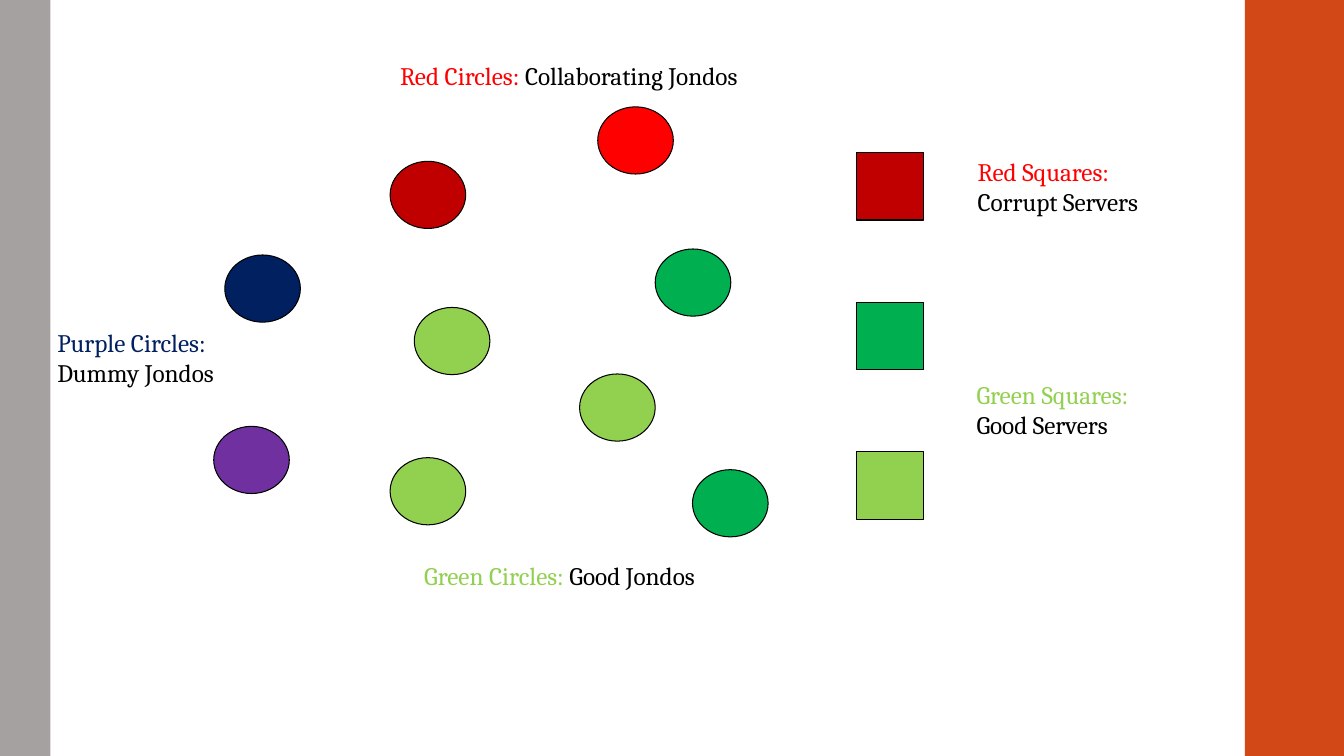
from dataclasses import dataclass

from pptx import Presentation
from pptx.dml.color import RGBColor
from pptx.enum.shapes import MSO_SHAPE
from pptx.enum.text import MSO_AUTO_SIZE
from pptx.shapes.autoshape import Shape
from pptx.slide import Slide
from pptx.util import Inches, Length, Pt

OVAL = MSO_SHAPE.OVAL
RECT = MSO_SHAPE.RECTANGLE
GROW = MSO_AUTO_SIZE.SHAPE_TO_FIT_TEXT

COLS, ROWS = 40, 22.5
CELL = Inches(1 / 3)


@dataclass(frozen=True)
class Theme:
    font: str = "Cambria"
    size: Length = Pt(18)
    line: Length = Pt(0.75)
    black: str = "000000"
    red: str = "FF0000"
    dark_red: str = "C00000"
    green: str = "00B050"
    lime: str = "92D050"
    navy: str = "002060"
    purple: str = "7030A0"
    orange: str = "D34817"
    gray: str = "A6A1A1"


@dataclass(frozen=True)
class Box:
    col: float
    row: float
    wide: float
    high: float


@dataclass(frozen=True)
class Jondo:
    col: float
    row: float
    color: str


@dataclass(frozen=True)
class Label:
    box: Box
    name: str
    color: str
    role: str
    stacked: bool = True


THEME = Theme()
JONDO_WIDE, JONDO_HIGH = 2.25, 2
SERVER_COL, SERVER_ROW, SERVER_STEP, SERVER_SIDE = 25.5, 4.55, 4.45, 2

BARS = [
    (Box(37.05, 0, 2.95, ROWS), THEME.orange),
    (Box(0, 0, 1.5, ROWS), THEME.gray),
]
JONDOS = [
    Jondo(11.61, 4.8, THEME.dark_red),
    Jondo(17.79, 3.18, THEME.red),
    Jondo(19.5, 7.41, THEME.green),
    Jondo(6.69, 7.59, THEME.navy),
    Jondo(12.33, 9.15, THEME.lime),
    Jondo(20.61, 13.98, THEME.green),
    Jondo(11.61, 13.62, THEME.lime),
    Jondo(6.36, 12.69, THEME.purple),
    Jondo(17.25, 11.13, THEME.lime),
]
SERVERS = [THEME.dark_red, THEME.green, THEME.lime]
LABELS = [
    Label(Box(12.33, 16.53, 9.03, 1.2), "Green Circles:", THEME.lime,
          "Good Jondos", stacked=False),
    Label(Box(11.61, 1.65, 10.74, 1.2), "Red Circles:", THEME.red,
          "Collaborating Jondos", stacked=False),
    Label(Box(1.41, 9.6, 5.31, 2.13), "Purple Circles:", THEME.navy, "Dummy Jondos"),
    Label(Box(28.77, 11.13, 5.31, 2.13), "Green Squares:", THEME.lime, "Good Servers"),
    Label(Box(28.8, 4.5, 5.4, 2.13), "Red Squares:", THEME.red, "Corrupt Servers"),
]


def place(box: Box) -> list[int]:
    """Turn grid cells into slide lengths."""
    return [round(n * CELL) for n in (box.col, box.row, box.wide, box.high)]


def add_block(slide: Slide, kind: MSO_SHAPE, box: Box, color: str) -> Shape:
    block = slide.shapes.add_shape(kind, *place(box))
    block.shadow.inherit = False
    block.fill.solid()
    block.fill.fore_color.rgb = RGBColor.from_string(color)
    block.line.fill.background()
    return block


def add_node(slide: Slide, kind: MSO_SHAPE, box: Box, color: str) -> None:
    """Draw a block with a thin black outline."""
    line = add_block(slide, kind, box, color).line
    line.color.rgb = RGBColor.from_string(THEME.black)
    line.width = THEME.line


def add_label(slide: Slide, label: Label) -> None:
    frame = slide.shapes.add_textbox(*place(label.box)).text_frame
    frame.word_wrap = False
    frame.auto_size = GROW
    head = frame.paragraphs[0]
    tail = frame.add_paragraph() if label.stacked else head
    gap = "" if label.stacked else " "
    parts = [(head, label.name, label.color), (tail, gap + label.role, THEME.black)]
    for para, text, color in parts:
        para.font.name = THEME.font
        para.font.size = THEME.size
        run = para.add_run()
        run.text = text
        run.font.color.rgb = RGBColor.from_string(color)


def main() -> None:
    deck = Presentation()
    deck.slide_width = round(COLS * CELL)
    deck.slide_height = round(ROWS * CELL)
    slide = deck.slides.add_slide(deck.slide_layouts[6])

    for box, color in BARS:
        add_block(slide, RECT, box, color)
    for jondo in JONDOS:
        box = Box(jondo.col, jondo.row, JONDO_WIDE, JONDO_HIGH)
        add_node(slide, OVAL, box, jondo.color)
    for i, color in enumerate(SERVERS):
        row = SERVER_ROW + i * SERVER_STEP
        add_node(slide, RECT, Box(SERVER_COL, row, SERVER_SIDE, SERVER_SIDE), color)
    for label in LABELS:
        add_label(slide, label)
    deck.save("out.pptx")


if __name__ == "__main__":
    main()
